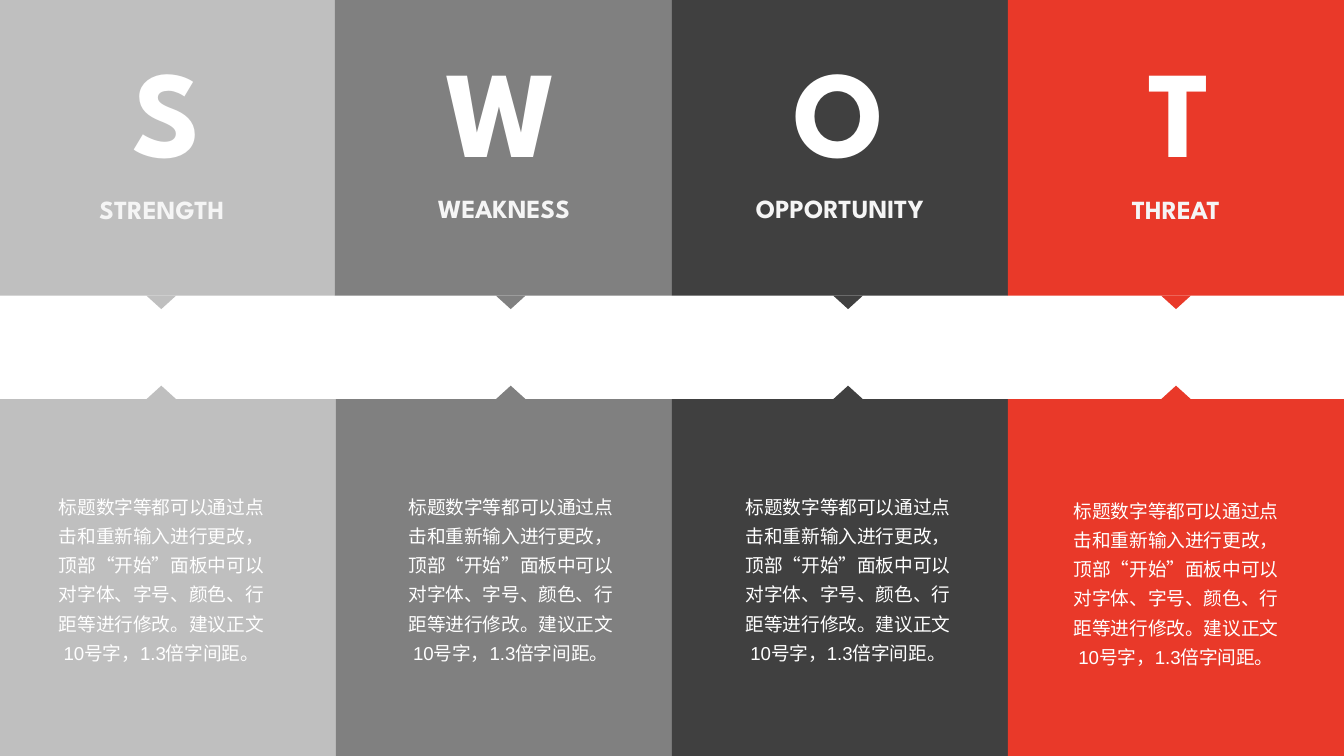
from pptx import Presentation
from pptx.dml.color import RGBColor
from pptx.enum.shapes import MSO_SHAPE
from pptx.enum.text import MSO_AUTO_SIZE, PP_ALIGN
from pptx.util import Inches, Pt

ADVICE = ("标题数字等都可以通过点击和重新输入进行更改，顶部“开始”面板中可以"
          "对字体、字号、颜色、行距等进行修改。建议正文10号字，1.3倍字间距。")

QUADRANTS = [
    {"letter": "S", "letter_box": (0.89, 0.21, 0.68, 1.21),
     "label": "STRENGTH", "label_box": (0.64, 1.39, 1.13, 0.34),
     "fill": "BFBFBF", "left": 0, "center": 1.2, "advice_top": 3.59},
    {"letter": "W", "letter_box": (3.22, 0.21, 1.03, 1.21),
     "label": "WEAKNESS", "label_box": (3.15, 1.38, 1.2, 0.34),
     "fill": "808080", "left": 2.49, "center": 3.8, "advice_top": 3.59},
    {"letter": "O", "letter_box": (5.75, 0.21, 0.98, 1.21),
     "label": "OPPORTUNITY", "label_box": (5.51, 1.38, 1.48, 0.34),
     "fill": "404040", "left": 5, "center": 6.31, "advice_top": 3.59},
    {"letter": "T", "letter_box": (8.45, 0.21, 0.59, 1.21),
     "label": "THREAT", "label_box": (8.32, 1.39, 0.86, 0.34),
     "fill": "E93929", "left": 7.5, "center": 8.75, "advice_top": 3.62},
]

THEME = {
    "letter": {"font": "League Spartan", "size": 66, "color": "FFFFFF", "bold": True},
    "label": {"font": "League Spartan", "size": 14, "color": "F5F5F5", "bold": True},
    "advice": {"font": "Arial", "size": 10, "color": "FFFFFF", "bold": False},
}

SLIDE_WIDTH = 10
SLIDE_HEIGHT = SLIDE_WIDTH * 9 / 16
COLUMN_WIDTH = SLIDE_WIDTH / len(QUADRANTS)
UPPER_BOTTOM, LOWER_TOP = 2.2, 2.97
MARKER_WIDTH, MARKER_HEIGHT = 0.22, 0.1
ADVICE_WIDTH, ADVICE_HEIGHT = 1.76, 1.41


def add_block(slide, kind, box, color, rotation=0):
    shape = slide.shapes.add_shape(kind, *map(Inches, box))
    shape.shadow.inherit = False
    shape.fill.solid()
    shape.fill.fore_color.rgb = RGBColor.from_string(color)
    shape.line.fill.background()
    shape.rotation = rotation


def add_text(slide, text, role, box, wrap=False):
    style = THEME[role]
    frame = slide.shapes.add_textbox(*map(Inches, box)).text_frame
    frame.word_wrap = wrap
    frame.auto_size = MSO_AUTO_SIZE.SHAPE_TO_FIT_TEXT
    paragraph = frame.paragraphs[0]
    paragraph.text = text
    paragraph.alignment = PP_ALIGN.CENTER
    paragraph.font.name = style["font"]
    paragraph.font.size = Pt(style["size"])
    paragraph.font.bold = style["bold"]
    paragraph.font.color.rgb = RGBColor.from_string(style["color"])
    return paragraph


def add_quadrant(slide, index, quadrant, right):
    color, center, left = quadrant["fill"], quadrant["center"], quadrant["left"]
    add_block(slide, MSO_SHAPE.RECTANGLE,
              (index * COLUMN_WIDTH, LOWER_TOP, COLUMN_WIDTH, SLIDE_HEIGHT - LOWER_TOP), color)
    add_block(slide, MSO_SHAPE.RECTANGLE, (left, 0, right - left, UPPER_BOTTOM), color)
    for top, rotation in ((LOWER_TOP - MARKER_HEIGHT, 0), (UPPER_BOTTOM, 180)):
        add_block(slide, MSO_SHAPE.ISOSCELES_TRIANGLE,
                  (center - MARKER_WIDTH / 2, top, MARKER_WIDTH, MARKER_HEIGHT),
                  color, rotation)
    for role in ("letter", "label"):
        add_text(slide, quadrant[role], role, quadrant[f"{role}_box"])
    advice = add_text(slide, ADVICE, "advice",
                      (center - ADVICE_WIDTH / 2, quadrant["advice_top"],
                       ADVICE_WIDTH, ADVICE_HEIGHT), wrap=True)
    advice.line_spacing = 1.3


def main():
    presentation = Presentation()
    presentation.slide_width = Inches(SLIDE_WIDTH)
    presentation.slide_height = Inches(SLIDE_HEIGHT)
    slide = presentation.slides.add_slide(presentation.slide_layouts[6])
    rights = [quadrant["left"] for quadrant in QUADRANTS[1:]] + [SLIDE_WIDTH]
    for index, (quadrant, right) in enumerate(zip(QUADRANTS, rights)):
        add_quadrant(slide, index, quadrant, right)
    presentation.save("out.pptx")


if __name__ == "__main__":
    main()
